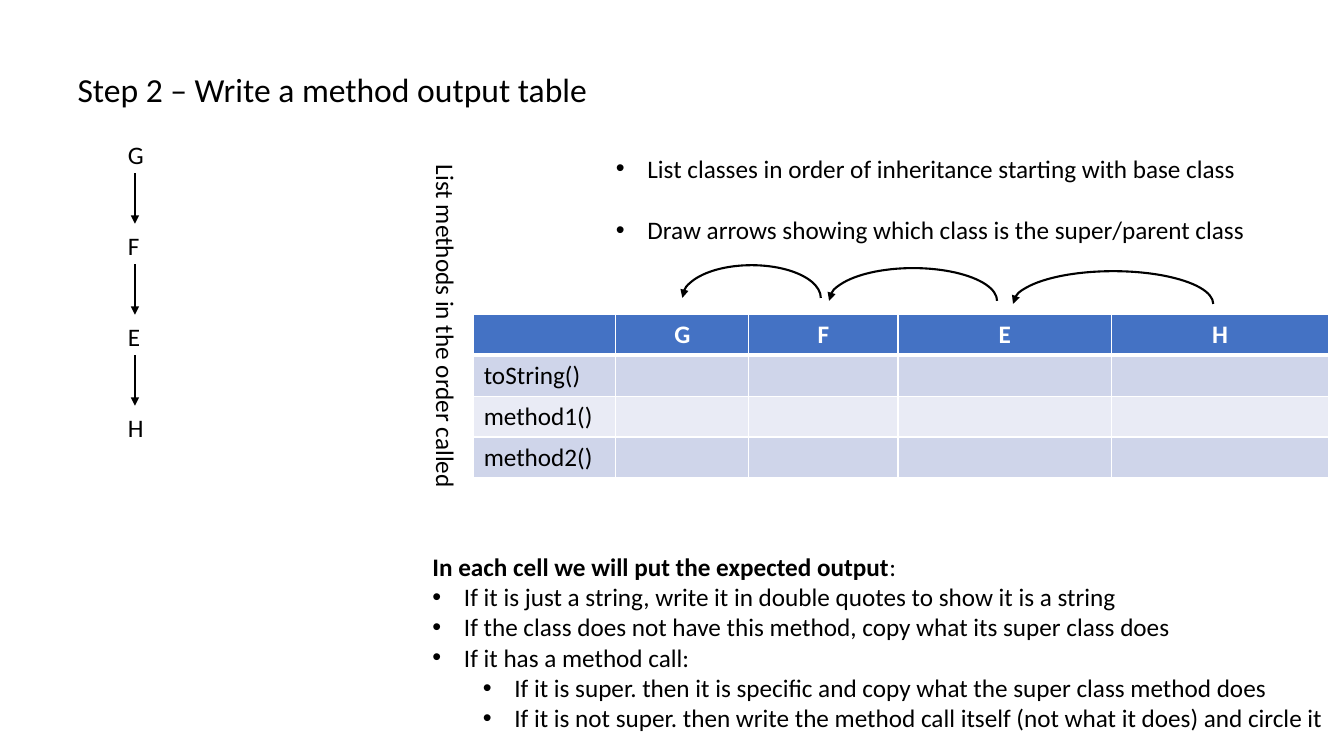
from dataclasses import dataclass
from lxml.etree import SubElement
from pptx import Presentation
from pptx.dml.color import RGBColor
from pptx.enum.shapes import MSO_CONNECTOR as Connector, MSO_SHAPE as Shape
from pptx.enum.text import MSO_ANCHOR as Anchor, MSO_AUTO_SIZE as AutoSize, PP_ALIGN as Align
from pptx.oxml.ns import qn
from pptx.util import Pt


@dataclass(frozen=True)
class Theme:
    font: str = "Calibri"
    title_size: int = 24
    text_size: int = 18
    ink: str = "000000"
    paper: str = "FFFFFF"
    header: str = "4472C4"
    bands: tuple = ("CFD5EA", "E9EBF5")
    line: float = 1.5
    grid: int = 1
    header_rule: int = 3


THEME = Theme()
TITLE = "Step 2 – Write a method output table"
CLASSES = ["G", "F", "E", "H"]
METHODS = ["toString()", "method1()", "method2()"]
METHODS_LABEL = "List methods in the order called"
CLASS_TIPS = [
    "List classes in order of inheritance starting with base class",
    "Draw arrows showing which class is the super/parent class",
]
OUTPUT_INTRO = ("In each cell we will put the expected output", ":")
OUTPUT_RULES = [
    (0, "If it is just a string, write it in double quotes to show it is a string"),
    (0, "If the class does not have this method, copy what its super class does"),
    (0, "If it has a method call:"),
    (1, "If it is super. then it is specific and copy what the super class method does"),
    (1, "If it is not super. then write the method call itself (not what it does) and circle it"),
]

COLUMNS = [101.5, 95, 106.6, 152.6, 154.8]
ROW_HEIGHT = 29.2
TABLE_LEFT, TABLE_TOP = 338.4, 224.6
PARENT_ARCS = [(487.4, 189.4, 98.9), (592.2, 191.5, 120), (723.6, 193.7, 143)]
ARC_HEIGHT = 46.8
CHAIN_LEFT, CHAIN_TOP, CHAIN_STEP = 84.2, 96.2, 65
LABEL_HEIGHT = 29
ARROW_LEFT, ARROW_TOP, ARROW_LENGTH = 96.4, 123.8, 36
BULLET_INDENT, LEVEL_INDENT = 22.5, 36


def style(para, size=THEME.text_size, color=THEME.ink, bold=False):
    para.font.name = THEME.font
    para.font.size = Pt(size)
    para.font.bold = bold
    para.font.color.rgb = RGBColor.from_string(color)


def place(box, left, top, width, height):
    box.left, box.top, box.width, box.height = Pt(left), Pt(top), Pt(width), Pt(height)
    frame = box.text_frame
    frame.word_wrap = True
    frame.auto_size = AutoSize.NONE
    frame.vertical_anchor = Anchor.TOP
    return frame


def set_bullet(para, level=0, char="•", gap=0):
    para.level = level
    para.space_before = Pt(gap)
    props = para._p.get_or_add_pPr()
    indent = BULLET_INDENT if char else 0
    props.set("marL", str(Pt(indent + level * LEVEL_INDENT)))
    props.set("indent", str(-Pt(indent)))
    if char:
        SubElement(props, qn("a:buFont"), typeface="Arial")
        SubElement(props, qn("a:buChar"), char=char)
    else:
        SubElement(props, qn("a:buNone"))


def draw_stroke(shape, arrow_end):
    shape.line.color.rgb = RGBColor.from_string(THEME.ink)
    shape.line.width = Pt(THEME.line)
    SubElement(shape.line._get_or_add_ln(), qn(f"a:{arrow_end}"), type="triangle")


def add_label(page, text, left, top, width):
    box = page.shapes.add_textbox(0, 0, 0, 0)
    para = place(box, left, top, width, LABEL_HEIGHT).paragraphs[0]
    para.text = text
    style(para)
    return box


def add_chain(page):
    for index, name in enumerate(CLASSES):
        offset = index * CHAIN_STEP
        add_label(page, name, CHAIN_LEFT, CHAIN_TOP + offset, 40)
        if index < len(CLASSES) - 1:
            start = ARROW_TOP + offset
            arrow = page.shapes.add_connector(
                Connector.STRAIGHT, Pt(ARROW_LEFT), Pt(start), Pt(ARROW_LEFT), Pt(start + ARROW_LENGTH))
            draw_stroke(arrow, "tailEnd")
            SubElement(arrow._element.spPr, qn("a:effectLst"))


def set_borders(cell, row):
    props = cell._tc.get_or_add_tcPr()
    heavy = {0: "lnB", 1: "lnT"}.get(row)
    for side in ("lnL", "lnR", "lnT", "lnB"):
        width = THEME.header_rule if side == heavy else THEME.grid
        line = SubElement(props, qn(f"a:{side}"), w=str(Pt(width)))
        SubElement(SubElement(line, qn("a:solidFill")), qn("a:srgbClr"), val=THEME.paper)


def add_output_table(page):
    rows = [["", *CLASSES]] + [[name] + [""] * len(CLASSES) for name in METHODS]
    table = page.shapes.add_table(
        len(rows), len(COLUMNS), Pt(TABLE_LEFT), Pt(TABLE_TOP),
        Pt(sum(COLUMNS)), Pt(ROW_HEIGHT * len(rows))).table
    for column, width in zip(table.columns, COLUMNS):
        column.width = Pt(width)
    for row, values in enumerate(rows):
        table.rows[row].height = Pt(ROW_HEIGHT)
        is_header = row == 0
        fill = THEME.header if is_header else THEME.bands[(row - 1) % 2]
        for column, value in enumerate(values):
            cell = table.cell(row, column)
            set_borders(cell, row)
            cell.fill.solid()
            cell.fill.fore_color.rgb = RGBColor.from_string(fill)
            para = cell.text_frame.paragraphs[0]
            para.text = value
            para.alignment = Align.CENTER if is_header else Align.LEFT
            style(para, color=THEME.paper if is_header else THEME.ink, bold=is_header)


def add_parent_arcs(page):
    for left, top, width in PARENT_ARCS:
        arc = page.shapes.add_shape(Shape.ARC, Pt(left), Pt(top), Pt(width), Pt(ARC_HEIGHT))
        arc.adjustments[0] = 108
        arc.shadow.inherit = False
        arc.fill.background()
        draw_stroke(arc, "headEnd")


def fill_placeholders(page):
    title, tips, rules = page.placeholders
    para = place(title, 48.2, 45.4, 404.6, 37).paragraphs[0]
    para.text = TITLE
    para.alignment = Align.LEFT
    style(para, size=THEME.title_size)

    frame = place(tips, 432.7, 105.8, 500.4, 72.7)
    for index, text in enumerate(CLASS_TIPS):
        para = frame.add_paragraph() if index else frame.paragraphs[0]
        para.text = text
        set_bullet(para, gap=22 * index)
        style(para)

    frame = place(rules, 301.7, 390.2, 658, 138.2)
    intro = frame.paragraphs[0]
    for text in OUTPUT_INTRO:
        intro.add_run().text = text
    intro.runs[0].font.bold = True
    set_bullet(intro, char="")
    style(intro)
    for level, text in OUTPUT_RULES:
        para = frame.add_paragraph()
        para.text = text
        set_bullet(para, level)
        style(para)


def main():
    deck = Presentation()
    deck.slide_width, deck.slide_height = Pt(960), Pt(540)
    page = deck.slides.add_slide(deck.slide_layouts.get_by_name("Two Content"))
    for footer in list(page.placeholders)[3:]:
        footer._element.getparent().remove(footer._element)
    fill_placeholders(page)
    add_output_table(page)
    add_parent_arcs(page)
    add_label(page, METHODS_LABEL, 195.8, 218.9, 245.5).rotation = 90
    add_chain(page)
    deck.save("out.pptx")


if __name__ == "__main__":
    main()
